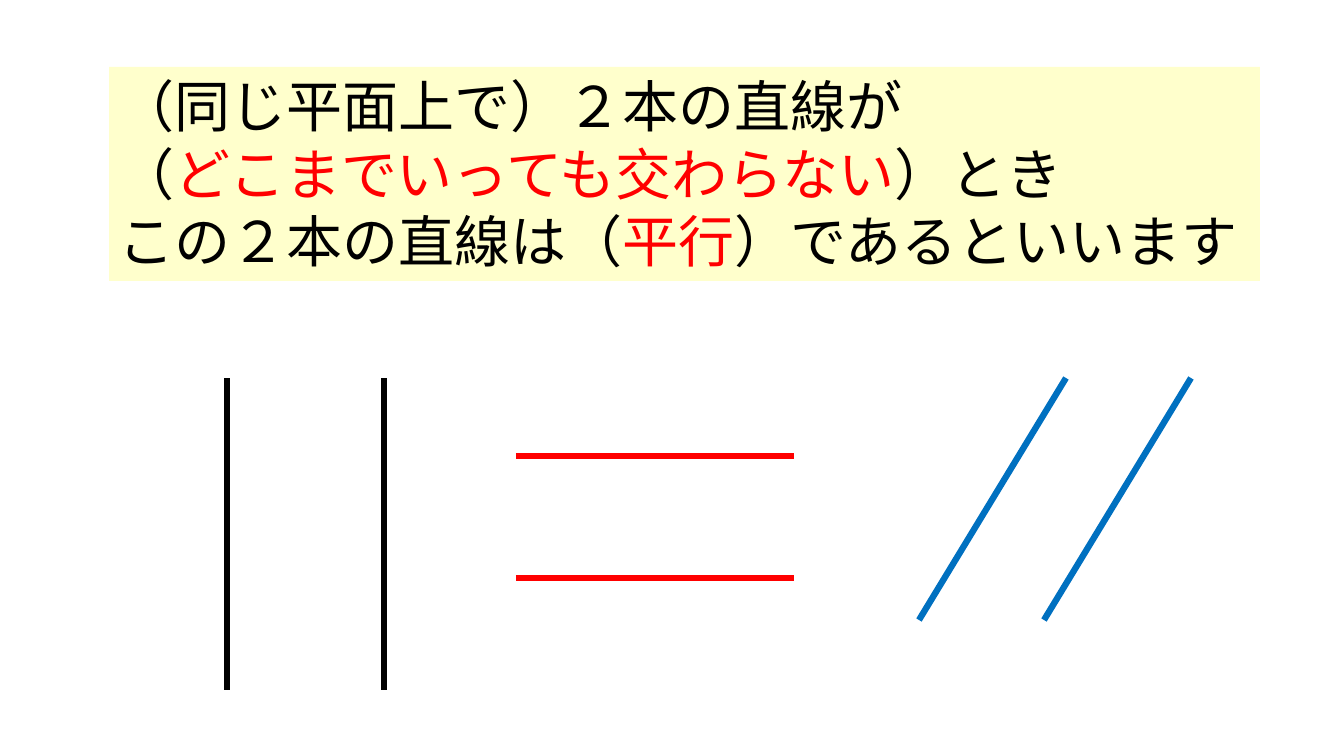
"""Builds a slide that defines parallel lines, with three pairs of them."""
import lxml.etree
import pptx
import pptx.dml.color
import pptx.enum.shapes
import pptx.enum.text
import pptx.oxml.ns
import pptx.util

PX = 914400 / 100.8
FONT = "Noto Sans CJK JP"
BLACK = pptx.dml.color.RGBColor(0x00, 0x00, 0x00)
RED = pptx.dml.color.RGBColor(0xFF, 0x00, 0x00)
BLUE = pptx.dml.color.RGBColor(0x00, 0x70, 0xC0)
CREAM = pptx.dml.color.RGBColor(0xFF, 0xFF, 0xCC)

DEFINITION = [
    [("（同じ平面上で）２本の直線が", BLACK)],
    [("（", BLACK), ("どこまでいっても交わらない", RED), ("）とき", BLACK)],
    [("この２本の直線は（", BLACK), ("平行", RED), ("）であるといいます", BLACK)],
]

PARALLEL_PAIRS = [
    ((227, 378), (227, 690), (157, 0), BLACK),
    ((516, 456), (794, 456), (0, 122), RED),
    ((1066, 378), (919, 620), (125, 0), BLUE),
]


def px(*lengths):
    """Turn pixel lengths into EMU."""
    return [pptx.util.Emu(round(length * PX)) for length in lengths]


def add_phrase(sentence, words, color):
    """Add one coloured run to a paragraph."""
    phrase = sentence.add_run()
    phrase.text = words
    phrase.font.size = pptx.util.Pt(40)
    phrase.font.name = FONT
    phrase.font.color.rgb = color
    east_asian = pptx.oxml.ns.qn("a:ea")
    lxml.etree.SubElement(phrase.font._element, east_asian, typeface=FONT)


def add_definition(slide, left, top, width, height):
    """Add the filled box with the definition."""
    definition = slide.shapes.add_textbox(*px(left, top, width, height))
    definition.fill.solid()
    definition.fill.fore_color.rgb = CREAM
    frame = definition.text_frame
    frame.word_wrap = False
    frame.auto_size = pptx.enum.text.MSO_AUTO_SIZE.SHAPE_TO_FIT_TEXT
    for number, phrases in enumerate(DEFINITION):
        sentence = frame.add_paragraph() if number else frame.paragraphs[0]
        for words, color in phrases:
            add_phrase(sentence, words, color)


def add_straight_line(slide, start, end, color):
    """Add one thick line without a shadow."""
    straight = pptx.enum.shapes.MSO_CONNECTOR.STRAIGHT
    line = slide.shapes.add_connector(straight, *px(*start, *end))
    line.line.color.rgb = color
    line.line.width = pptx.util.Pt(4.5)
    effects = pptx.oxml.ns.qn("a:effectLst")
    lxml.etree.SubElement(line._element.spPr, effects)


def add_parallel_pair(slide, start, end, shift, color):
    """Add a line and its parallel, moved by the shift."""
    for step in range(2):
        dx, dy = (step * distance for distance in shift)
        add_straight_line(
            slide,
            (start[0] + dx, start[1] + dy),
            (end[0] + dx, end[1] + dy),
            color,
        )


def main():
    """Build and save the slide."""
    lesson = pptx.Presentation()
    lesson.slide_width, lesson.slide_height = px(1344, 756)
    slide = lesson.slides.add_slide(lesson.slide_layouts[6])
    add_definition(slide, 109, 67, 1151, 214)
    for start, end, shift, color in PARALLEL_PAIRS:
        add_parallel_pair(slide, start, end, shift, color)
    lesson.save("out.pptx")


if __name__ == "__main__":
    main()
